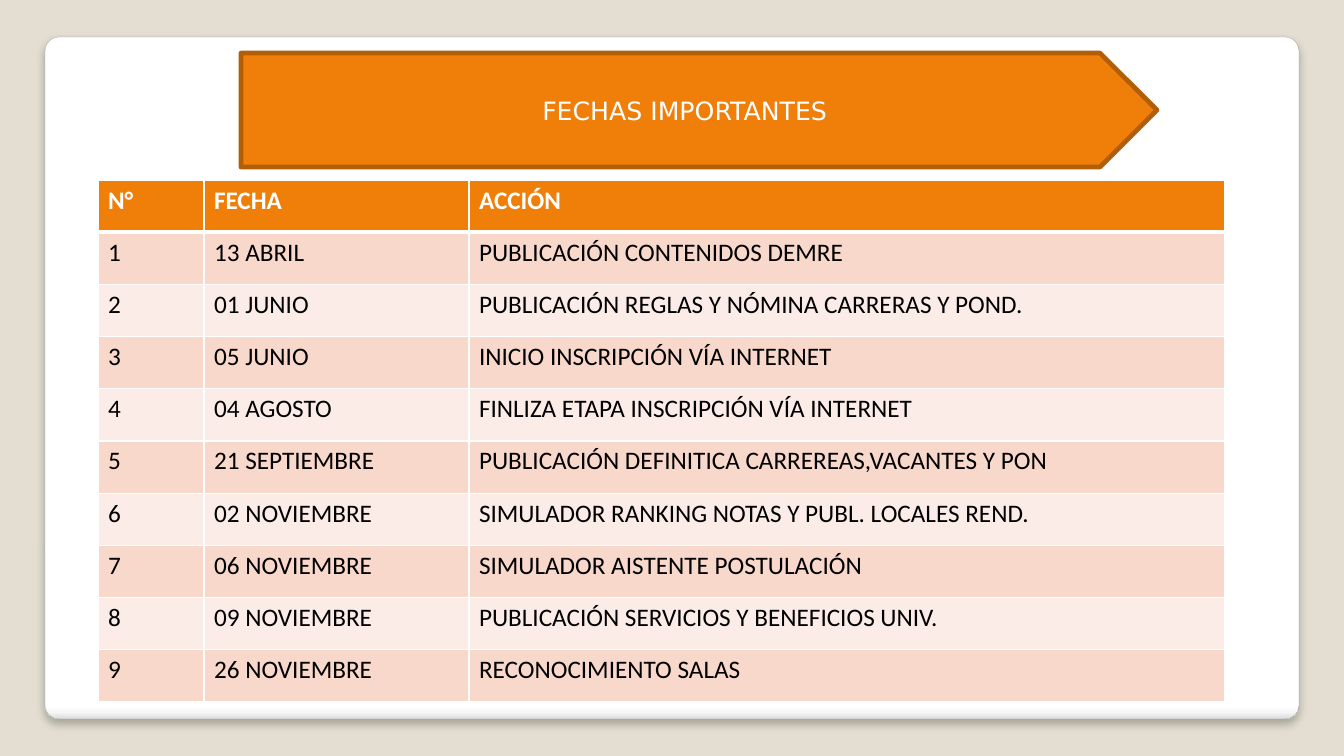
"""Build the slide of important dates: a card, an arrow title and a table."""
import dataclasses

import lxml.etree
import pptx
import pptx.dml.color
import pptx.enum.shapes
import pptx.enum.text
import pptx.oxml
import pptx.oxml.ns
import pptx.util

SCALE = 914400 / 100.8
NS = pptx.oxml.ns.nsdecls("a")
KIND = pptx.enum.shapes.MSO_SHAPE
WHITE, BLACK, ORANGE = "FFFFFF", "000000", "F07F09"
BANDS = ("F9D8CC", "FCECE7")


@dataclasses.dataclass(frozen=True)
class Box:
    """A place on the slide, in px."""
    left: int
    top: int
    width: int
    height: int


@dataclasses.dataclass(frozen=True)
class Panel:
    """A preset shape with its fill and outline."""
    kind: KIND
    box: Box
    fill: str
    line: str
    weight: float


@dataclasses.dataclass(frozen=True)
class Event:
    """A date and what happens on it."""
    date: str
    action: str


CARD = Panel(KIND.ROUNDED_RECTANGLE, Box(45, 37, 1254, 682), WHITE, "A4A4A4", 0.16)
BANNER = Panel(KIND.PENTAGON, Box(241, 53, 916, 114), ORANGE, "B25E07", 3.35)
GRID = Box(98, 180, 1127, 522)
COLS = (106, 265, 756)
HEAD = ("N°", "FECHA", "ACCIÓN")
EVENTS = (
    Event("13 ABRIL", "PUBLICACIÓN CONTENIDOS DEMRE"),
    Event("01 JUNIO", "PUBLICACIÓN REGLAS Y NÓMINA CARRERAS Y POND."),
    Event("05 JUNIO", "INICIO INSCRIPCIÓN VÍA INTERNET"),
    Event("04 AGOSTO", "FINLIZA ETAPA INSCRIPCIÓN VÍA INTERNET"),
    Event("21 SEPTIEMBRE", "PUBLICACIÓN DEFINITICA CARREREAS,VACANTES Y PON"),
    Event("02 NOVIEMBRE", "SIMULADOR RANKING NOTAS Y PUBL. LOCALES REND."),
    Event("06 NOVIEMBRE", "SIMULADOR AISTENTE POSTULACIÓN"),
    Event("09 NOVIEMBRE", "PUBLICACIÓN SERVICIOS Y BENEFICIOS UNIV."),
    Event("26 NOVIEMBRE", "RECONOCIMIENTO SALAS"),
)
STOPS = ((0, WHITE), (98, WHITE), (99, "F7F7F7"), (100, "DADADA"))


def px(size: int) -> int:
    """Turn px into EMU."""
    return round(size * SCALE)


def place(box: Box) -> tuple[int, ...]:
    """Give the sides of a box in EMU."""
    return tuple(px(side) for side in dataclasses.astuple(box))


def paint(fill, tone: str) -> None:
    """Make a fill solid in one colour."""
    fill.solid()
    fill.fore_color.rgb = pptx.dml.color.RGBColor.from_string(tone)


def style(para, face: str, tone: str, bold: bool = False) -> None:
    """Set the font of a paragraph."""
    font = para.font
    font.name, font.size, font.bold = face, pptx.util.Pt(18), bold
    paint(font.fill, tone)


def draw(slide, panel: Panel):
    """Add a panel to the slide."""
    shape = slide.shapes.add_shape(panel.kind, *place(panel.box))
    shape.shadow.inherit = False
    paint(shape.fill, panel.fill)
    paint(shape.line.fill, panel.line)
    shape.line.width = pptx.util.Pt(panel.weight)
    return shape


def shade(card) -> None:
    """Give the card its rounding, gradient foot and soft shadow."""
    card.adjustments[0] = 0.021
    card.fill.gradient()
    card.fill.gradient_angle = 270
    stops = card._element.spPr.find(".//" + pptx.oxml.ns.qn("a:gsLst"))
    for stop in list(stops):
        stops.remove(stop)
    for pos, tone in STOPS:
        stops.append(pptx.oxml.parse_xml(
            f'<a:gs {NS} pos="{pos * 1000}"><a:srgbClr val="{tone}"/></a:gs>'))
    effects = card._element.spPr.find(pptx.oxml.ns.qn("a:effectLst"))
    effects.append(pptx.oxml.parse_xml(
        f'<a:outerShdw {NS} blurRad="{pptx.util.Pt(6)}" dist="{pptx.util.Pt(4)}" '
        f'dir="5400000" algn="t" rotWithShape="0"><a:srgbClr val="{BLACK}">'
        '<a:alpha val="25000"/></a:srgbClr></a:outerShdw>'))


def border(cell, top: int, bottom: int) -> None:
    """Give a cell white edges, with top and bottom weights in points."""
    props = cell._tc.get_or_add_tcPr()
    for side, weight in (("L", 1), ("R", 1), ("T", top), ("B", bottom)):
        props.append(pptx.oxml.parse_xml(
            f'<a:ln{side} {NS} w="{pptx.util.Pt(weight)}"><a:solidFill>'
            f'<a:srgbClr val="{WHITE}"/></a:solidFill></a:ln{side}>'))


def tabulate(slide) -> None:
    """Add the table of dates."""
    rows = [HEAD] + [(str(num), event.date, event.action)
                     for num, event in enumerate(EVENTS, 1)]
    table = slide.shapes.add_table(len(rows), len(COLS), *place(GRID)).table
    table.horz_banding = False
    for col, width in zip(table.columns, COLS):
        col.width = px(width)
    for r, texts in enumerate(rows):
        table.rows[r].height = px(GRID.height) // len(rows)
        head = r == 0
        for c, text in enumerate(texts):
            cell = table.cell(r, c)
            border(cell, 3 if r == 1 else 1, 3 if head else 1)
            paint(cell.fill, ORANGE if head else BANDS[(r - 1) % 2])
            cell.text = text
            style(cell.text_frame.paragraphs[0], "Calibri",
                  WHITE if head else BLACK, head)


def main() -> None:
    """Build and save the slide."""
    deck = pptx.Presentation()
    deck.slide_width, deck.slide_height = px(1344), px(756)
    slide = deck.slides.add_slide(deck.slide_layouts[6])
    paint(slide.background.fill, "E3DED1")
    shade(draw(slide, CARD))
    frame = draw(slide, BANNER).text_frame
    frame.text = "FECHAS IMPORTANTES"
    frame.vertical_anchor = pptx.enum.text.MSO_ANCHOR.MIDDLE
    title = frame.paragraphs[0]
    title.alignment = pptx.enum.text.PP_ALIGN.CENTER
    style(title, "DejaVu Sans", WHITE)
    tabulate(slide)
    deck.save("out.pptx")


if __name__ == "__main__":
    main()
